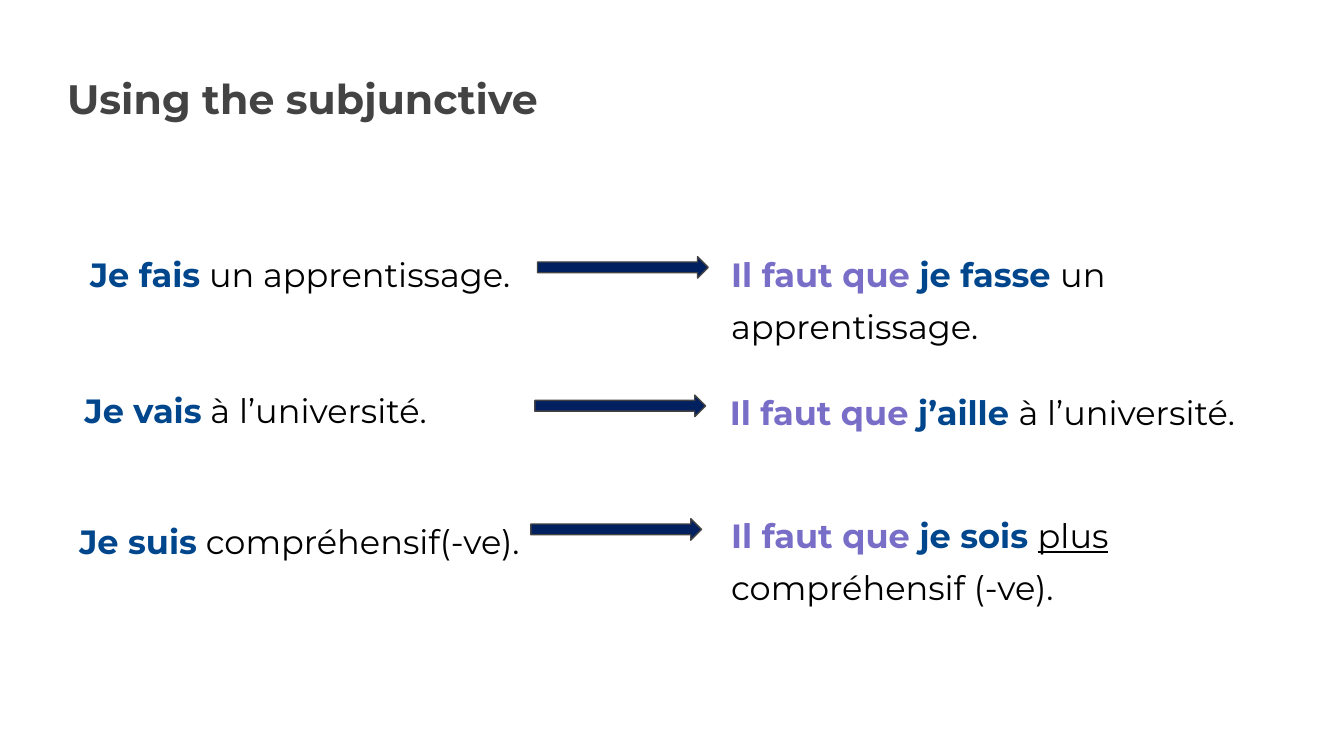
from dataclasses import dataclass

from pptx import Presentation
from pptx.dml.color import RGBColor
from pptx.enum.shapes import MSO_SHAPE
from pptx.enum.text import MSO_ANCHOR, MSO_AUTO_SIZE, PP_ALIGN
from pptx.util import Inches, Pt

FONT = "Montserrat"
GREY, NAVY, BLUE, PURPLE, BLACK = "434343", "002060", "00468C", "786EC8", "000000"


@dataclass(frozen=True)
class Run:
    text: str
    color: str = BLACK
    bold: bool = False
    underline: bool = False


@dataclass(frozen=True)
class Sentence:
    left: float
    top: float
    runs: tuple[Run, ...]
    width: float = 3.89


@dataclass(frozen=True)
class Example:
    indicative: Sentence
    arrow_left: float
    arrow_top: float
    subjunctive: Sentence


def verb(text: str) -> Run:
    return Run(text, BLUE, bold=True)


TRIGGER = Run("Il faut que", PURPLE, bold=True)

EXAMPLES = (
    Example(
        Sentence(0.67, 1.8, (verb("Je fais"), Run(" un apprentissage."))),
        4, 1.91,
        Sentence(5.44, 1.8, (TRIGGER, verb(" je fasse "), Run("un apprentissage."))),
    ),
    Example(
        Sentence(0.63, 2.81, (verb("Je vais"), Run(" à l’université."))),
        3.98, 2.94,
        Sentence(5.43, 2.83, (TRIGGER, verb(" j’aille "), Run("à l’université."))),
    ),
    Example(
        Sentence(0.59, 3.79, (verb("Je suis"), Run(" compréhensif(-ve)."))),
        3.95, 3.86,
        Sentence(5.44, 3.74, (TRIGGER, verb(" je sois "), Run("plus", underline=True),
                              Run(" compréhensif (-ve).")), width=4.38),
    ),
)


def rgb(color: str) -> RGBColor:
    return RGBColor.from_string(color)


def write(shape, runs: tuple[Run, ...], size: float, line_spacing: float) -> None:
    """Fill a text shape with one left-aligned paragraph."""
    frame = shape.text_frame
    frame.word_wrap = True
    frame.auto_size = MSO_AUTO_SIZE.NONE
    frame.vertical_anchor = MSO_ANCHOR.TOP
    frame.margin_left = frame.margin_top = frame.margin_right = frame.margin_bottom = 0
    paragraph = frame.paragraphs[0]
    paragraph.alignment = PP_ALIGN.LEFT
    paragraph.line_spacing = line_spacing
    paragraph.space_before = Pt(0)
    for item in runs:
        run = paragraph.add_run()
        run.text = item.text
        run.font.name = FONT
        run.font.size = Pt(size)
        run.font.bold = item.bold
        run.font.underline = item.underline
        run.font.color.rgb = rgb(item.color)


def add_sentence(slide, sentence: Sentence) -> None:
    box = slide.shapes.add_textbox(Inches(sentence.left), Inches(sentence.top),
                                   Inches(sentence.width), Inches(0.4))
    write(box, sentence.runs, size=18, line_spacing=1.3)


def add_arrow(slide, left: float, top: float) -> None:
    arrow = slide.shapes.add_shape(MSO_SHAPE.RIGHT_ARROW, Inches(left), Inches(top),
                                   Inches(1.27), Inches(0.16))
    arrow.shadow.inherit = False
    arrow.fill.solid()
    arrow.fill.fore_color.rgb = rgb(NAVY)
    arrow.line.color.rgb = rgb(GREY)
    arrow.line.width = Pt(0.75)


def main() -> None:
    # Widescreen 16:9 page
    presentation = Presentation()
    presentation.slide_width = Inches(10)
    presentation.slide_height = Inches(10) * 9 // 16
    slide = presentation.slides.add_slide(presentation.slide_layouts[5])

    # Title
    title = slide.shapes.title
    title.left, title.top = Inches(0.5), Inches(0.49)
    title.width, title.height = Inches(5.84), Inches(0.45)
    write(title, (Run("Using the subjunctive", GREY, bold=True),), size=22, line_spacing=1.15)

    # Indicative sentences, each with an arrow to its subjunctive form
    for example in EXAMPLES:
        add_sentence(slide, example.indicative)
        add_arrow(slide, example.arrow_left, example.arrow_top)
        add_sentence(slide, example.subjunctive)

    presentation.save("out.pptx")


if __name__ == "__main__":
    main()
